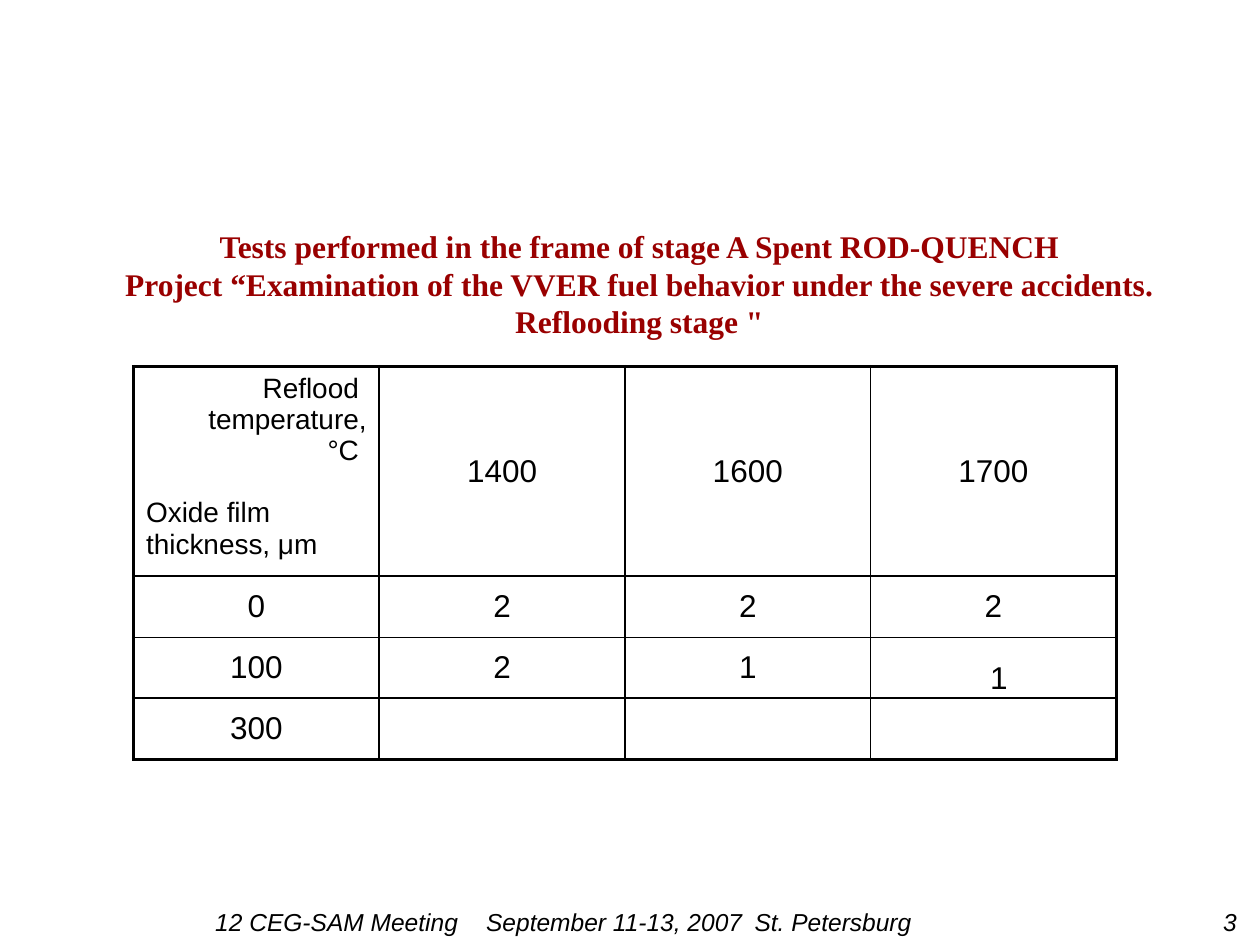
from lxml import etree
from pptx import Presentation
from pptx.dml.color import RGBColor
from pptx.enum.text import MSO_ANCHOR, MSO_AUTO_SIZE, PP_ALIGN
from pptx.oxml.ns import qn
from pptx.util import Inches, Pt

LEFT, CENTER, RIGHT = PP_ALIGN.LEFT, PP_ALIGN.CENTER, PP_ALIGN.RIGHT
TOP, MIDDLE = MSO_ANCHOR.TOP, MSO_ANCHOR.MIDDLE
NO_FIT = MSO_AUTO_SIZE.NONE
BLACK, DARK_RED = "000000", "990000"

TITLE = ("Tests performed in the frame of stage A Spent ROD-QUENCH\n"
         "Project “Examination of the VVER fuel behavior under the severe accidents. "
         "Reflooding stage \"")
CORNER = ["Reflood ", "temperature,\n °С ", "Oxide film thickness, μm"]
ROWS = [
    ["", "1400", "1600", "1700"],
    ["0", "2", "2", "2"],
    ["100", "2", "1", ""],
    ["300", "", "", ""],
]
ROW_HEIGHTS = [1.66, 0.49, 0.48, 0.49]
COL_WIDTH = 1.95
FOOTER = ["12 CEG-SAM Meeting", "September 11-13, 2007", "St. Petersburg", "3"]
FOOTER_TABS = [2.15, 4.28, 8]
LAST_TEST = "1"


def style(p, size, align=LEFT, font="Arial", color=BLACK, bold=False, italic=False):
    """Align a paragraph and format its runs."""
    p.alignment = align
    for r in p.runs:
        r.font.name = font
        r.font.size = Pt(size)
        r.font.bold = bold
        r.font.italic = italic
        r.font.color.rgb = RGBColor.from_string(color)


def set_borders(cell, widths):
    """Draw black cell borders, given as side-to-points pairs."""
    tcPr = cell._tc.get_or_add_tcPr()
    for side, width in widths.items():
        ln = etree.SubElement(tcPr, qn(f"a:ln{side}"), w=str(Pt(width)))
        fill = etree.SubElement(ln, qn("a:solidFill"))
        etree.SubElement(fill, qn("a:srgbClr"), val=BLACK)


def add_text(s, text, left, top, width, height):
    """Add a wrapped one-paragraph text box and return its paragraph."""
    tf = s.shapes.add_textbox(*map(Inches, (left, top, width, height))).text_frame
    tf.word_wrap = True
    p = tf.paragraphs[0]
    p.text = text
    return p


def add_title(s):
    """Place and format the slide title."""
    title = s.shapes.title
    title.left, title.top = Inches(0.84), Inches(1.75)
    title.width, title.height = Inches(8.47), Inches(1)
    tf = title.text_frame
    tf.auto_size = NO_FIT
    tf.vertical_anchor = MIDDLE
    p = tf.paragraphs[0]
    p.text = TITLE
    style(p, 18, CENTER, "Times New Roman", DARK_RED, bold=True)


def add_test_table(s):
    """Build the table of test counts."""
    n_rows, n_cols = len(ROWS), len(ROWS[0])
    table = s.shapes.add_table(
        n_rows, n_cols, Inches(1.06), Inches(2.91),
        Inches(COL_WIDTH * n_cols), Inches(sum(ROW_HEIGHTS))).table
    table.first_row = table.horz_banding = False
    for column in table.columns:
        column.width = Inches(COL_WIDTH)
    for i, row in enumerate(ROWS):
        table.rows[i].height = Inches(ROW_HEIGHTS[i])
        for j, text in enumerate(row):
            cell = table.cell(i, j)
            outer = {"L": j == 0, "R": j == n_cols - 1, "T": i == 0, "B": i == n_rows - 1}
            set_borders(cell, {side: 2.25 if edge else 1 for side, edge in outer.items()})
            cell.fill.background()
            cell.vertical_anchor = MIDDLE
            cell.text = text
            style(cell.text_frame.paragraphs[0], 18, CENTER)

    corner = table.cell(0, 0)
    corner.vertical_anchor = TOP
    tf = corner.text_frame
    for i, text in enumerate(CORNER):
        p = tf.paragraphs[0] if i == 0 else tf.add_paragraph()
        p.text = text
        style(p, 16, LEFT if i == 2 else RIGHT)
    p.space_before = Pt(18)


def add_footer(s):
    """Add the meeting line with the slide number."""
    p = add_text(s, "\t".join(FOOTER), 1.61, 7.15, 8.39, 0.33)
    tabs = etree.SubElement(p._p.get_or_add_pPr(), qn("a:tabLst"))
    for pos in FOOTER_TABS:
        etree.SubElement(tabs, qn("a:tab"), pos=str(Inches(pos)), algn="l")
    style(p, 14, italic=True)


def main():
    """Build and save the slide."""
    prs = Presentation()
    prs.slide_width, prs.slide_height = Inches(10), Inches(7.5)
    s = prs.slides.add_slide(prs.slide_layouts[5])
    add_test_table(s)
    add_title(s)
    add_footer(s)
    style(add_text(s, LAST_TEST, 7.76, 5.17, 0.35, 0.4), 18)
    prs.save("out.pptx")


if __name__ == "__main__":
    main()
